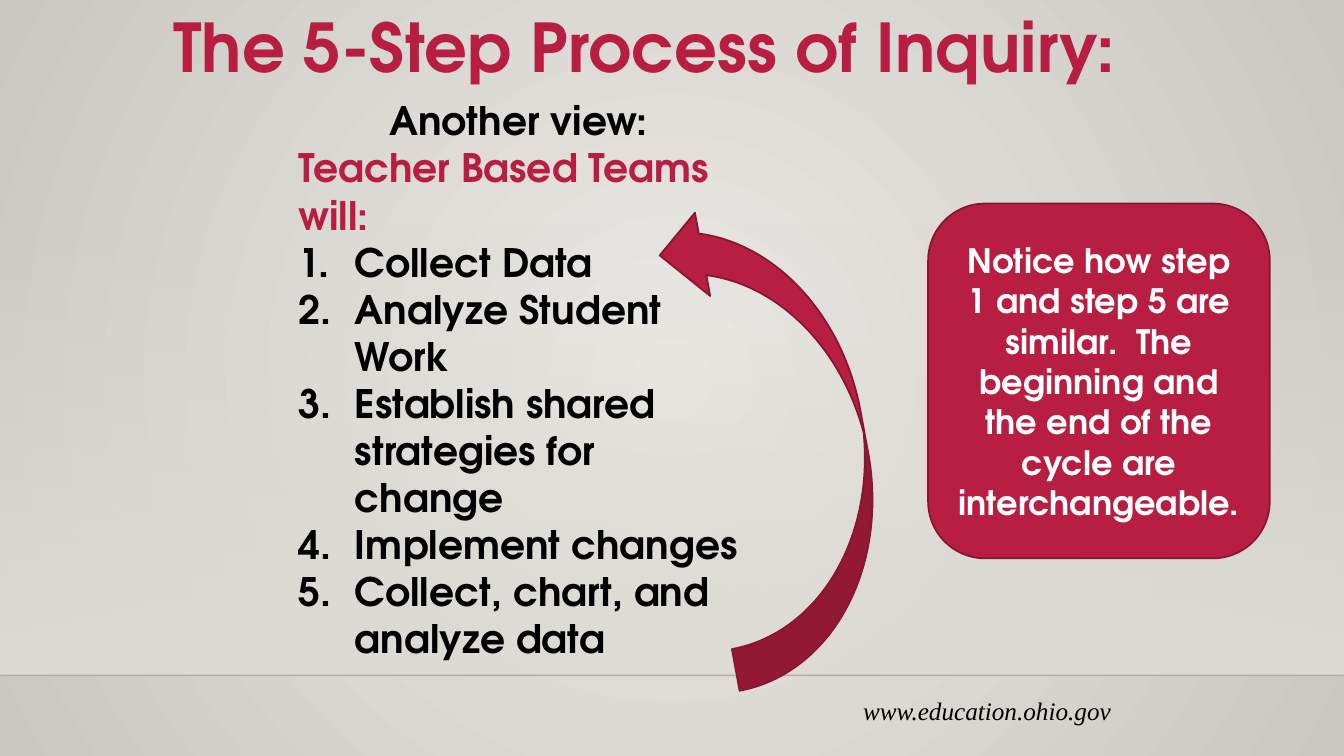
"""Build the slide about the five-step process of inquiry."""
from lxml import etree
from pptx import Presentation
from pptx.dml.color import RGBColor
from pptx.enum.shapes import MSO_CONNECTOR, MSO_SHAPE
from pptx.enum.text import MSO_ANCHOR, MSO_AUTO_SIZE, PP_ALIGN
from pptx.oxml.ns import qn
from pptx.util import Cm, Pt

TITLE = "The 5-Step Process of Inquiry:"
SUBTITLE = "Another view:"
LEAD = "Teacher Based Teams will:"
STEPS = [
    "Collect Data",
    "Analyze Student Work",
    "Establish shared strategies for change",
    "Implement changes",
    "Collect, chart, and analyze data",
]
NOTICE = ("Notice how step 1 and step 5 are similar.  The beginning and "
          "the end of the cycle are interchangeable.")
WEBSITE = "www.education.ohio.gov"

CRIMSON = RGBColor(0xB7, 0x1E, 0x42)
DARK_CRIMSON = RGBColor(0x87, 0x16, 0x31)
BLACK = RGBColor(0, 0, 0)
WHITE = RGBColor(0xFF, 0xFF, 0xFF)
SAND = RGBColor(0xDF, 0xDB, 0xD5)
LIGHT_SAND = RGBColor(0xEC, 0xEA, 0xE7)
DARK_SAND = RGBColor(0xCA, 0xC7, 0xC1)

LEFT, CENTER = PP_ALIGN.LEFT, PP_ALIGN.CENTER
TOP, MIDDLE = MSO_ANCHOR.TOP, MSO_ANCHOR.MIDDLE
NO_FIT = MSO_AUTO_SIZE.NONE
RECTANGLE = MSO_SHAPE.RECTANGLE
CURVED_ARROW = MSO_SHAPE.CURVED_RIGHT_ARROW
ROUNDED_PANEL = MSO_SHAPE.FLOWCHART_ALTERNATE_PROCESS
STRAIGHT = MSO_CONNECTOR.STRAIGHT

HEADING_FONT = {"name": "TeX Gyre Adventor", "bold": True, "italic": False}
TITLE_FONT = {**HEADING_FONT, "size": Pt(48)}
BODY_FONT = {**HEADING_FONT, "size": Pt(28)}
NOTICE_FONT = {**HEADING_FONT, "size": Pt(24)}
WEBSITE_FONT = {"name": "Times New Roman", "bold": False, "italic": True, "size": Pt(18)}

WIDTH, HEIGHT = Cm(33.87), Cm(19.05)
HORIZON = Cm(17.02)
FLOOR_TOP = Cm(5.61)
TITLE_INDENT = Cm(3.79)
STEP_INDENT = Cm(1.43)


def place(shape, left, top, width, height):
    """Move and size a shape, in centimetres."""
    for name, value in dict(left=left, top=top, width=width, height=height).items():
        setattr(shape, name, Cm(value))


def set_alpha(colour_parent, percent):
    """Make the solid colour inside an element partly transparent."""
    colour = next(colour_parent.iter(qn("a:srgbClr")))
    etree.SubElement(colour, qn("a:alpha"), val=str(percent * 1000))


def set_gradient(fill, colours):
    """Give a fill a gradient of two colours."""
    fill.gradient()
    for stop, colour in zip(fill.gradient_stops, colours):
        stop.color.rgb = colour


def write(para, text, font, colour, align=LEFT, indent=0, numbered=False):
    """Write one formatted paragraph."""
    properties = para._p.get_or_add_pPr()
    properties.set("marL", str(indent))
    properties.set("indent", str(-indent if numbered else 0))
    para.alignment = align
    para.line_spacing = 1.0
    para.space_before = para.space_after = Pt(0)
    if numbered:
        etree.SubElement(properties, qn("a:buFont"), typeface="+mj-lt")
        etree.SubElement(properties, qn("a:buAutoNum"), type="arabicPeriod")
    else:
        etree.SubElement(properties, qn("a:buNone"))
    span = para.add_run()
    span.text = text
    for name, value in font.items():
        setattr(span.font, name, value)
    span.font.color.rgb = colour


def frame_of(shape, anchor=TOP, wrap=True):
    """Prepare and return the text frame of a shape."""
    frame = shape.text_frame
    settings = {"word_wrap": wrap, "auto_size": NO_FIT, "vertical_anchor": anchor}
    for name, value in settings.items():
        setattr(frame, name, value)
    return frame


def add_backdrop(page):
    """Draw the background, the floor and the horizon line."""
    set_gradient(page.background.fill, (LIGHT_SAND, DARK_SAND))
    linear = next(page.element.iter(qn("a:lin")))
    radial = etree.Element(qn("a:path"), path="circle")
    etree.SubElement(radial, qn("a:fillToRect"), l="50000", t="50000", r="50000", b="50000")
    linear.getparent().replace(linear, radial)

    floor = page.shapes.add_shape(RECTANGLE, 0, FLOOR_TOP, WIDTH, HORIZON - FLOOR_TOP)
    floor.shadow.inherit = False
    floor.line.fill.background()
    set_gradient(floor.fill, (SAND, SAND))
    floor.fill.gradient_angle = 270
    set_alpha(floor.element.spPr, 0)

    horizon = page.shapes.add_connector(STRAIGHT, 0, HORIZON, WIDTH, HORIZON)
    horizon.line.color.rgb = BLACK
    horizon.line.width = Pt(1)
    set_alpha(horizon.element.spPr, 20)
    etree.SubElement(horizon.element.spPr, qn("a:effectLst"))

    for position, shape in enumerate((floor, horizon), start=2):
        page.shapes.element.insert(position, shape.element)


def add_crimson_shape(page, kind, *bounds):
    """Add a crimson shape with a dark outline."""
    shape = page.shapes.add_shape(kind, *map(Cm, bounds))
    shape.shadow.inherit = False
    shape.fill.solid()
    shape.fill.fore_color.rgb = CRIMSON
    shape.line.color.rgb = DARK_CRIMSON
    shape.line.width = Pt(1.25)
    return shape


def main():
    """Build and save the deck."""
    deck = Presentation()
    deck.slide_width, deck.slide_height = WIDTH, HEIGHT
    page = deck.slides.add_slide(deck.slide_layouts[1])
    add_backdrop(page)

    title, body = page.placeholders
    place(title, 0.33, 0, 33.54, 2.31)
    write(frame_of(title).paragraphs[0], TITLE, TITLE_FONT, CRIMSON, indent=TITLE_INDENT)

    place(body, 7.26, 2.31, 11.61, 14.6)
    frame = frame_of(body)
    write(frame.paragraphs[0], SUBTITLE, BODY_FONT, BLACK, CENTER)
    write(frame.add_paragraph(), LEAD, BODY_FONT, CRIMSON)
    for step in STEPS:
        write(frame.add_paragraph(), step, BODY_FONT, BLACK, indent=STEP_INDENT, numbered=True)

    arrow = add_crimson_shape(page, CURVED_ARROW, 17.5, 4.9, 4.27, 12.22)
    arrow.rotation = 169.6

    panel = add_crimson_shape(page, ROUNDED_PANEL, 23.39, 5.13, 8.61, 8.94)
    write(frame_of(panel, MIDDLE).paragraphs[0], NOTICE, NOTICE_FONT, WHITE, CENTER)

    website = page.shapes.add_textbox(Cm(21.46), Cm(17.4), Cm(6.83), Cm(1.02))
    write(frame_of(website, wrap=False).paragraphs[0], WEBSITE, WEBSITE_FONT, BLACK, CENTER)

    deck.save("out.pptx")


if __name__ == "__main__":
    main()
